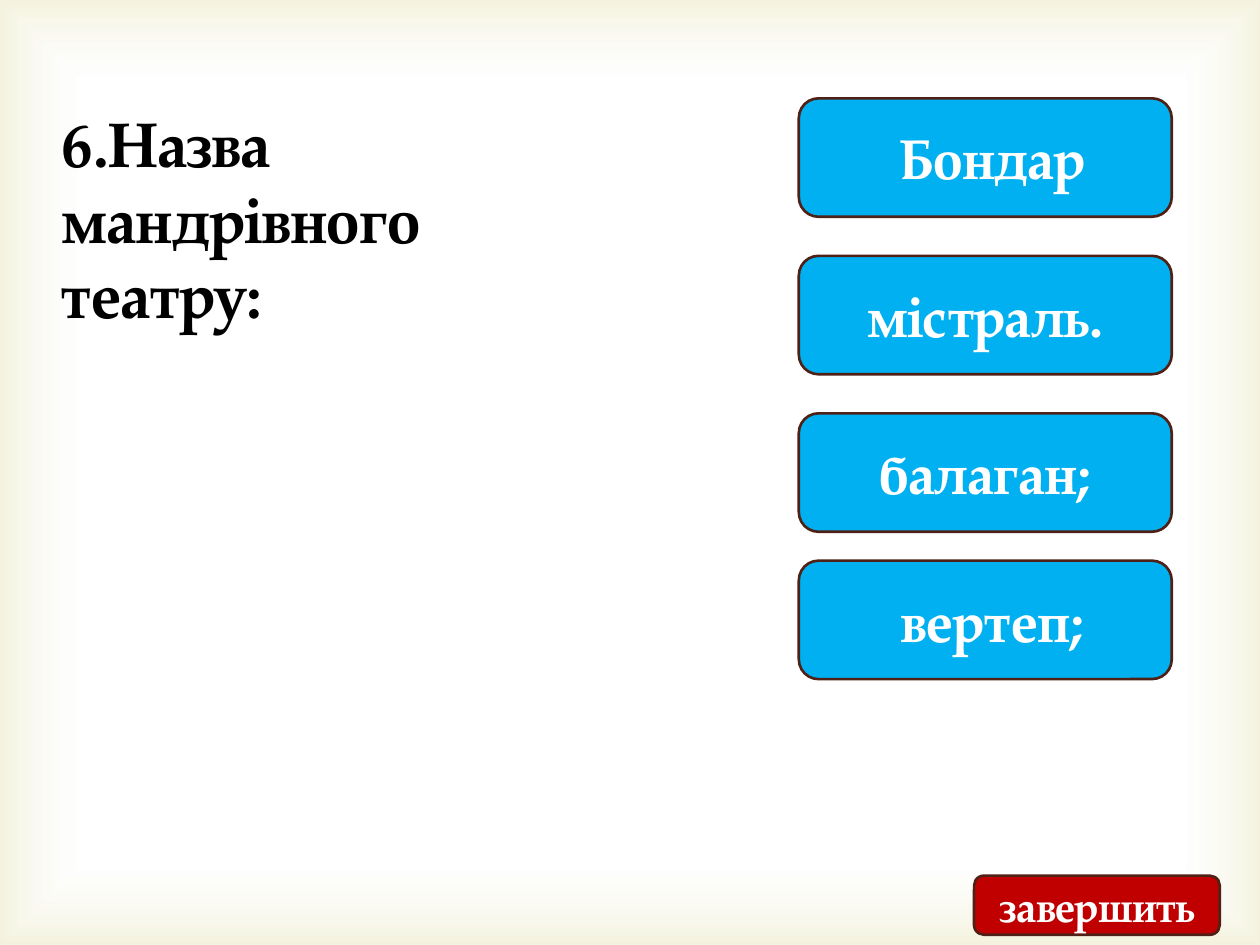
from lxml.etree import SubElement
from pptx import Presentation
from pptx.dml.color import RGBColor as Color
from pptx.enum.shapes import MSO_SHAPE as Shape
from pptx.enum.text import MSO_ANCHOR as Anchor, MSO_AUTO_SIZE as AutoSize, PP_ALIGN as Align
from pptx.oxml.ns import qn
from pptx.util import Pt

QUESTION = "6.Назва мандрівного театру:"
ANSWERS = [" Бондар", "містраль.", "балаган;", " вертеп;"]
FINISH = "завершить"

THEME = {
    "font": "TeX Gyre Pagella",
    "ink": "000000",
    "white": "FFFFFF",
    "answer": "00B0F0",
    "finish": "C00000",
    "outline": "4F2015",
    "glow": [(0, "FFFFFF", 11), (83, "FFFFFF", 11), (100, "D1CA75", 23)],
    "question_size": 36,
    "answer_size": 32,
    "finish_size": 24,
}

PAGE_WIDTH, PAGE_HEIGHT = 720, 540
QUESTION_BOX = (28.1, 56.2, 337.7, 138.2)
FINISH_BOX = (556.6, 500.4, 140.4, 33.8)
ANSWER_LEFT, ANSWER_TOP = 456.5, 56.2
ANSWER_WIDTH, ANSWER_HEIGHT = 213.1, 67.7
ANSWER_GAPS = [22.3, 22.3, 16.5]


def write(frame, text, size, color, align=Align.CENTER, anchor=Anchor.MIDDLE):
    frame.word_wrap = True
    frame.vertical_anchor = anchor
    para = frame.paragraphs[0]
    para.alignment = align
    span = para.add_run()
    span.text = text
    span.font.name = THEME["font"]
    span.font.size = Pt(size)
    span.font.bold = True
    span.font.color.rgb = Color.from_string(color)


def add_button(page, box, text, size, fill):
    button = page.shapes.add_shape(Shape.ROUNDED_RECTANGLE, *map(Pt, box))
    button.shadow.inherit = False
    button.fill.solid()
    button.fill.fore_color.rgb = Color.from_string(fill)
    button.line.color.rgb = Color.from_string(THEME["outline"])
    button.line.width = Pt(1.5)
    write(button.text_frame, text, size, THEME["white"])


def add_glow(page):
    glow = page.shapes.add_shape(Shape.RECTANGLE, 0, 0, Pt(PAGE_WIDTH), Pt(PAGE_HEIGHT))
    glow.shadow.inherit = False
    glow.line.fill.background()
    glow.fill.gradient()
    gradient = glow.element.spPr.find(qn("a:gradFill"))
    for child in list(gradient):
        gradient.remove(child)
    stops = SubElement(gradient, qn("a:gsLst"))
    for position, color, opacity in THEME["glow"]:
        stop = SubElement(stops, qn("a:gs"), pos=str(position * 1000))
        tint = SubElement(stop, qn("a:srgbClr"), val=color)
        SubElement(tint, qn("a:alpha"), val=str(opacity * 1000))
    shade = SubElement(gradient, qn("a:path"), {"path": "rect"})
    SubElement(shade, qn("a:fillToRect"), dict.fromkeys("ltrb", "50000"))
    page.shapes.title.element.addprevious(glow.element)


def add_question(page):
    title = page.shapes.title
    title.left, title.top, title.width, title.height = map(Pt, QUESTION_BOX)
    title.text_frame.auto_size = AutoSize.SHAPE_TO_FIT_TEXT
    write(title.text_frame, QUESTION, THEME["question_size"], THEME["ink"],
          align=Align.LEFT, anchor=Anchor.TOP)


def add_answers(page):
    top = ANSWER_TOP
    for text, gap in zip(ANSWERS, ANSWER_GAPS + [0]):
        box = (ANSWER_LEFT, top, ANSWER_WIDTH, ANSWER_HEIGHT)
        add_button(page, box, text, THEME["answer_size"], THEME["answer"])
        top += ANSWER_HEIGHT + gap


def main():
    deck = Presentation()
    deck.slide_width, deck.slide_height = Pt(PAGE_WIDTH), Pt(PAGE_HEIGHT)
    page = deck.slides.add_slide(deck.slide_layouts[5])
    add_glow(page)
    add_question(page)
    add_answers(page)
    add_button(page, FINISH_BOX, FINISH, THEME["finish_size"], THEME["finish"])
    deck.save("out.pptx")


if __name__ == "__main__":
    main()
